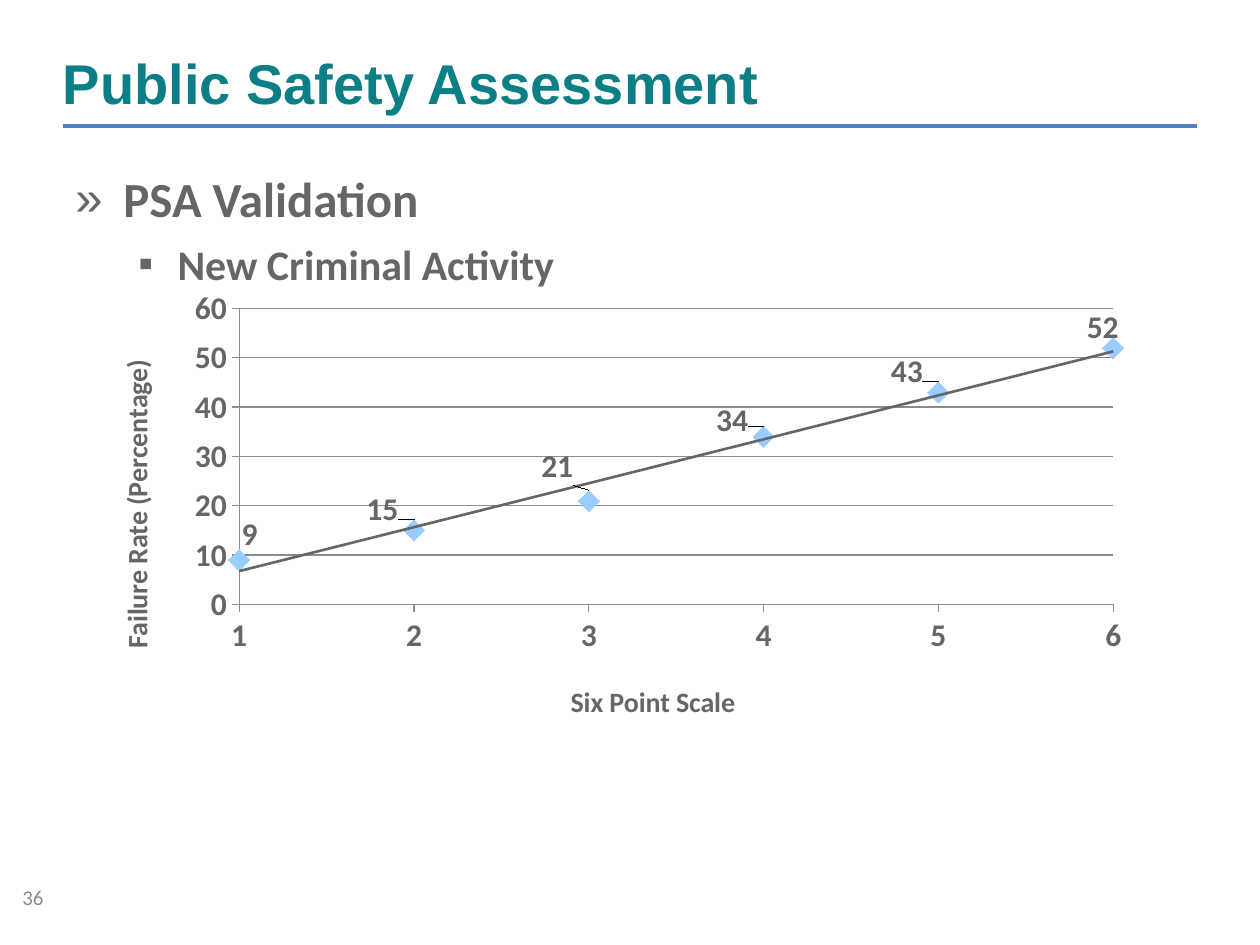
from lxml import etree
from pptx import Presentation, util as u
from pptx.chart.data import XyChartData
from pptx.dml.color import RGBColor
from pptx.enum import chart as ch, shapes, text
from pptx.oxml import parse_xml
from pptx.oxml.ns import nsdecls, qn

GREY, RULE = "666666", "8C8C8C"


def style(font, size, color=GREY, bold=True, face="Calibri"):
    font.name, font.size, font.bold = face, u.Pt(size), bold
    font.color.rgb = RGBColor.from_string(color)


def layout(x, y, extra=""):
    return parse_xml(
        f'<c:layout {nsdecls("c")}><c:manualLayout>{extra}'
        f'<c:x val="{x}"/><c:y val="{y}"/></c:manualLayout></c:layout>')


prs = Presentation()
prs.slide_width, prs.slide_height = u.Cm(25.4), u.Cm(19.05)
slide = prs.slides.add_slide(prs.slide_layouts[6])

# Rule under the title
rule = slide.shapes.add_connector(
    shapes.MSO_CONNECTOR.STRAIGHT, u.Cm(1.27), u.Cm(2.54), u.Cm(24.13), u.Cm(2.54))
rule.line.color.rgb = RGBColor.from_string("4F81BD")
rule.line.width = u.Pt(2.5)
etree.SubElement(rule.element.spPr, qn("a:effectLst"))

# Bullets
body = slide.shapes.add_textbox(u.Cm(1.27), u.Cm(3.28), u.Cm(21.84), u.Cm(11.38))
frame = body.text_frame
frame.word_wrap = True
items = [("PSA Validation", "»", 28, 0.97, 0.97),
         ("New Criminal Activity", "▪", 24, 2.06, 0.79)]
for i, (line, mark, size, left, hang) in enumerate(items):
    para = frame.add_paragraph() if i else frame.paragraphs[0]
    para.text, para.level, para.space_after = line, i, u.Pt(6)
    props = para._p.get_or_add_pPr()
    props.set("marL", str(u.Cm(left)))
    props.set("indent", str(-u.Cm(hang)))
    etree.SubElement(props, qn("a:buFont")).set("typeface", "Arial")
    etree.SubElement(props, qn("a:buChar")).set("char", mark)
    style(para.runs[0].font, size)

# Title and page number
labels = [("Public Safety Assessment", (1.27, 0.76, 22.86, 1.78), 0, (32, "0B7E86", True, "Arial")),
          ("36", (0.2, 17.58, 5.92, 1.02), 0.25, (12, RULE, False))]
for words, box, inset, look in labels:
    frame = slide.shapes.add_textbox(*map(u.Cm, box)).text_frame
    frame.word_wrap = True
    frame.vertical_anchor = text.MSO_ANCHOR.MIDDLE
    frame.margin_left = frame.margin_right = u.Cm(inset)
    frame.margin_top = frame.margin_bottom = u.Cm(inset / 2)
    frame.text = words
    style(frame.paragraphs[0].runs[0].font, *look)

# Scatter chart
data = XyChartData()
rates = data.add_series("Series 1")
for x, y in enumerate([9, 15, 21, 34, 43, 52], 1):
    rates.add_data_point(x, y)
chart = slide.shapes.add_chart(
    ch.XL_CHART_TYPE.XY_SCATTER, u.Cm(1.85), u.Cm(5.66), u.Cm(21.23), u.Cm(9.32), data).chart
chart.has_legend = chart.has_title = False
style(chart.font, 18)
plot = chart.plots[0]
plot.vary_by_categories = False

# Plot area placement
area = chart.element.find(".//" + qn("c:plotArea"))
for old in area.findall(qn("c:layout")):
    area.remove(old)
spot = layout(0.14, 0.06, '<c:layoutTarget val="inner"/><c:xMode val="edge"/><c:yMode val="edge"/>')
for tag, size in (("c:w", 0.83), ("c:h", 0.64)):
    etree.SubElement(spot[0], qn(tag)).set("val", str(size))
area.insert(0, spot)

# Axes
edge = '<c:xMode val="edge"/><c:yMode val="edge"/>'
axes = [(chart.category_axis, "Six Point Scale", 1, 6, 1, 0.45, 0.86),
        (chart.value_axis, "Failure Rate (Percentage)", 0, 60, 10, 0.02, 0.16)]
for axis, name, low, high, step, x, y in axes:
    axis.minimum_scale, axis.maximum_scale, axis.major_unit = low, high, step
    axis.major_tick_mark = ch.XL_TICK_MARK.OUTSIDE
    axis.has_major_gridlines = axis is chart.value_axis
    axis.tick_labels.number_format = "0"
    axis.tick_labels.number_format_is_linked = False
    style(axis.tick_labels.font, 18)
    axis.format.line.color.rgb = RGBColor.from_string(RULE)
    head = axis.axis_title
    head.text_frame.text = name
    style(head.text_frame.paragraphs[0].runs[0].font, 16)
    for old in head._element.findall(qn("c:layout")):
        head._element.remove(old)
    head._element.find(qn("c:tx")).addnext(layout(x, y, edge))
turn = chart.value_axis.axis_title._element.find(".//" + qn("a:bodyPr"))
turn.set("rot", "-5400000")
turn.set("vert", "horz")
grid = chart.value_axis.major_gridlines.format.line
grid.color.rgb = RGBColor.from_string(RULE)
grid.width = u.Pt(0.75)

# Markers
ser = plot.series[0]
ser.smooth = False
ser.format.line.fill.background()
ser.marker.style, ser.marker.size = ch.XL_MARKER_STYLE.DIAMOND, 12
ser.marker.format.fill.solid()
ser.marker.format.fill.fore_color.rgb = RGBColor.from_string("99CCFF")
ser.marker.format.line.fill.background()

# Value labels, nudged clear of the trend line
nudges = [(0.01, 0.02), (-0.03, 0.03), (-0.03, 0), (-0.03, 0.04), (-0.03, 0.03), (-0.01, 0.03)]
for i in range(len(nudges)):
    label = ser.points[i].data_label
    style(label.font, 18)
    label.position = ch.XL_LABEL_POSITION.ABOVE
for tag, nudge in zip(chart.element.iter(qn("c:dLbl")), nudges):
    tag.find(qn("c:idx")).addnext(layout(*nudge))

# Linear trend line
trend = parse_xml(
    f'<c:trendline {nsdecls("c", "a")}><c:spPr><a:ln w="{u.Pt(1.5)}"><a:solidFill>'
    f'<a:srgbClr val="{GREY}"/></a:solidFill></a:ln></c:spPr>'
    '<c:trendlineType val="linear"/><c:dispRSqr val="0"/><c:dispEq val="0"/></c:trendline>')
chart.element.find(".//" + qn("c:xVal")).addprevious(trend)

prs.save("out.pptx")
